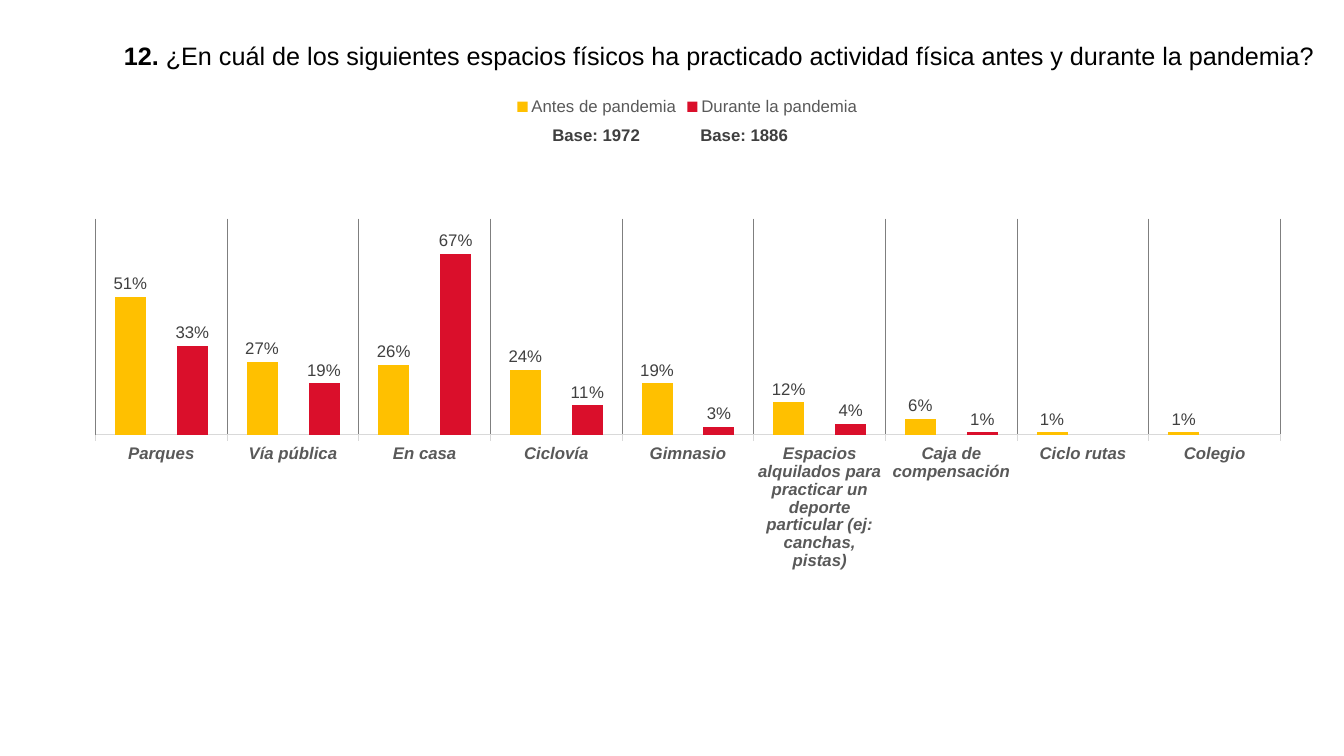
from lxml import etree
from pptx import Presentation
from pptx.chart.data import CategoryChartData
from pptx.dml.color import RGBColor
from pptx.enum.chart import (XL_CHART_TYPE, XL_LABEL_POSITION, XL_LEGEND_POSITION,
                             XL_TICK_MARK)
from pptx.enum.text import PP_ALIGN
from pptx.oxml.ns import qn
from pptx.util import Cm, Pt

COLUMNS = XL_CHART_TYPE.COLUMN_CLUSTERED
OUTSIDE_END = XL_LABEL_POSITION.OUTSIDE_END
LEGEND_TOP = XL_LEGEND_POSITION.TOP
TICK_OUTSIDE = XL_TICK_MARK.OUTSIDE
LEFT, RIGHT = PP_ALIGN.LEFT, PP_ALIGN.RIGHT

QUESTION = [
    ("12. ", True),
    ("¿En cuál de los siguientes espacios físicos ha practicado actividad física "
     "antes y durante la pandemia?", False),
]
BASES = ["Base: 1972", "Base: 1886"]
PLACES = [
    "Parques", "Vía pública", "En casa", "Ciclovía", "Gimnasio",
    "Espacios alquilados para practicar un deporte particular (ej: canchas, pistas)",
    "Caja de compensación", "Ciclo rutas", "Colegio",
]
PERIODS = [
    ("Antes de pandemia", "before", [0.51, 0.27, 0.26, 0.24, 0.19, 0.12, 0.06, 0.01, 0.01]),
    ("Durante la pandemia", "during", [0.33, 0.19, 0.67, 0.11, 0.03, 0.04, 0.01, None, None]),
]
COLORS = {
    "before": "FFC000", "during": "DA0F2B", "question": "000000", "base": "3F3F3F",
    "value": "404040", "label": "595959", "axis": "D9D9D9", "divider": "7F7F7F",
}
FONT = "Arial"
PLOT_AREA = {"x": 0.013, "y": 0.257, "w": 0.975, "h": 0.421}
BASE_LEFT, BASE_STEP = 13.08, 3.73


def color(name):
    return RGBColor.from_string(COLORS[name])


def style_font(font, size, tint, bold=False, italic=False):
    font.name, font.size, font.bold, font.italic = FONT, Pt(size), bold, italic
    font.color.rgb = color(tint)


def add_text(slide, runs, left, top, width, height, size, tint, align=LEFT, spacing=1.0):
    frame = slide.shapes.add_textbox(Cm(left), Cm(top), Cm(width), Cm(height)).text_frame
    frame.word_wrap = True
    paragraph = frame.paragraphs[0]
    paragraph.alignment, paragraph.line_spacing = align, spacing
    for words, bold in runs:
        run = paragraph.add_run()
        run.text = words
        style_font(run.font, size, tint, bold)


def fix_plot_area(chart):
    plot_area = chart.element.find(".//" + qn("c:plotArea"))
    for previous in plot_area.findall(qn("c:layout")):
        plot_area.remove(previous)
    layout = etree.Element(qn("c:layout"))
    manual = etree.SubElement(layout, qn("c:manualLayout"))
    settings = {"layoutTarget": "inner", "xMode": "edge", "yMode": "edge", **PLOT_AREA}
    for tag, value in settings.items():
        etree.SubElement(manual, qn("c:" + tag)).set("val", str(value))
    plot_area.insert(0, layout)


def add_places_chart(slide):
    survey = CategoryChartData(number_format="0%")
    survey.categories = PLACES
    for period, _, shares in PERIODS:
        survey.add_series(period, shares)
    chart = slide.shapes.add_chart(
        COLUMNS, Cm(2.01), Cm(2.18), Cm(30.63), Cm(12.95), survey).chart
    chart.has_title = False
    style_font(chart.font, 10, "question")
    chart.has_legend = True
    chart.legend.position = LEGEND_TOP
    chart.legend.include_in_layout = False
    style_font(chart.legend.font, 12, "label")

    places = chart.category_axis
    places.major_tick_mark = TICK_OUTSIDE
    places.has_major_gridlines = True
    for line, tint in ((places.format.line, "axis"),
                       (places.major_gridlines.format.line, "divider")):
        line.color.rgb = color(tint)
        line.width = Pt(0.75)
    style_font(places.tick_labels.font, 12, "label", bold=True, italic=True)

    shares_axis = chart.value_axis
    shares_axis.minimum_scale, shares_axis.maximum_scale = 0, 0.8
    shares_axis.has_major_gridlines = False
    shares_axis.visible = False

    plot = chart.plots[0]
    plot.gap_width, plot.overlap, plot.vary_by_categories = 125, -100, False
    for series, (_, tint, _) in zip(plot.series, PERIODS):
        series.format.fill.solid()
        series.format.fill.fore_color.rgb = color(tint)
        labels = series.data_labels
        labels.show_value = True
        labels.position = OUTSIDE_END
        labels.number_format, labels.number_format_is_linked = "0%", False
        style_font(labels.font, 12, "value")
    fix_plot_area(chart)


def main():
    """Build the survey slide on places for physical activity."""
    deck = Presentation()
    deck.slide_width, deck.slide_height = Cm(33.87), Cm(19.05)
    slide = deck.slides.add_slide(deck.slide_layouts[6])
    add_places_chart(slide)
    add_text(slide, QUESTION, 2.87, 0.89, 30.99, 1.02, 18, "question")
    for index, base in enumerate(BASES):
        add_text(slide, [(base, True)], BASE_LEFT + index * BASE_STEP, 3.1, 3.3, 1.68,
                 12, "base", align=RIGHT, spacing=0.83)
    deck.save("out.pptx")


if __name__ == "__main__":
    main()
